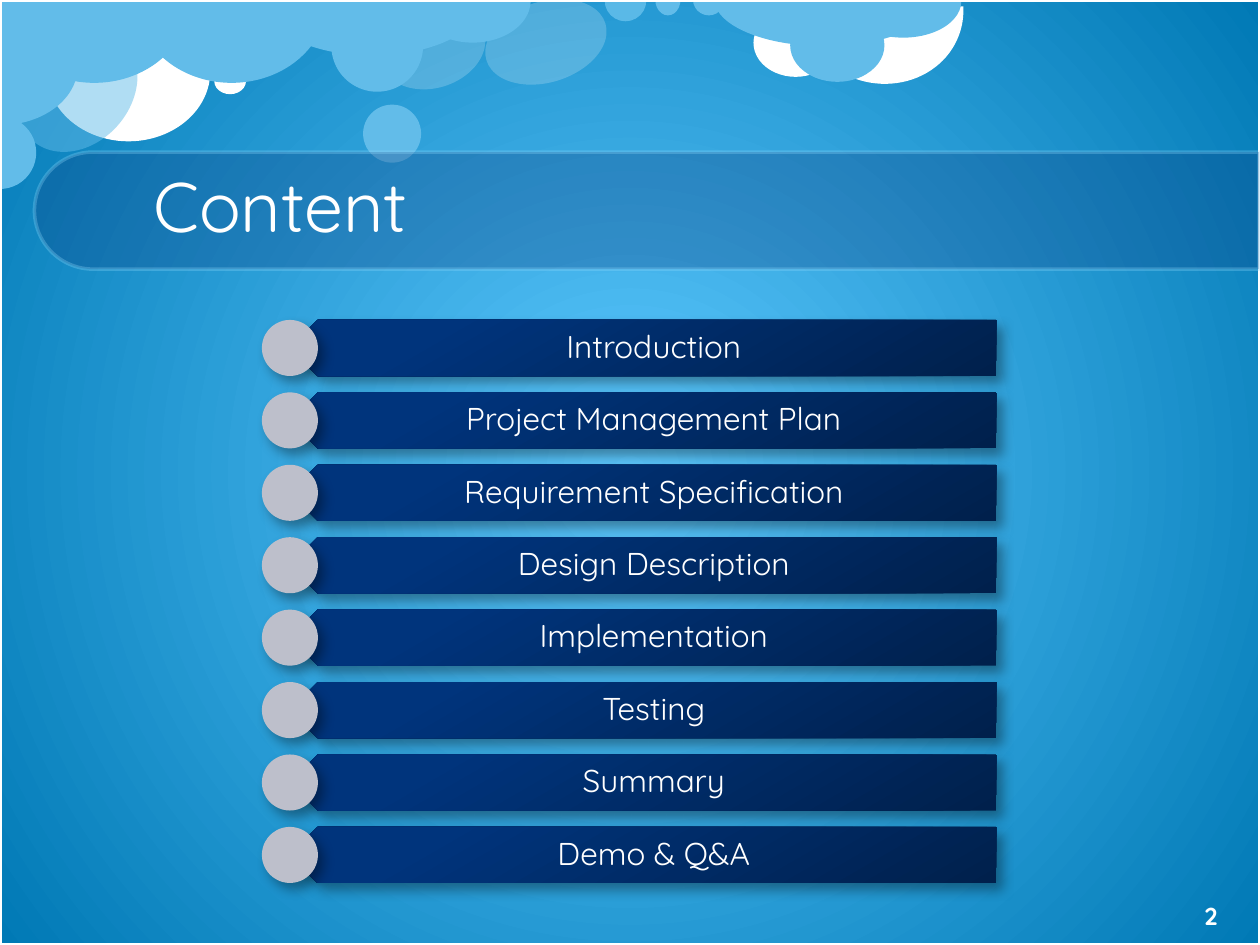
from lxml import etree
from pptx import Presentation
from pptx.dml.color import RGBColor
from pptx.enum.shapes import MSO_SHAPE as Geo
from pptx.enum.text import MSO_ANCHOR as Anchor, PP_ALIGN as Align
from pptx.oxml import parse_xml
from pptx.oxml.ns import nsdecls, qn
from pptx.util import Cm, Pt

FONT = "Quicksand"
WHITE, SKY, PALE, NAVY, SILVER = "FFFFFF", "62BCE9", "8FD9FB", "073779", "BDBFCB"
HALF = (0, 108)
TOPICS = [
    "Introduction", "Project Management Plan", "Requirement Specification",
    "Design Description", "Implementation", "Testing", "Summary", "Demo & Q&A",
]
CLOUDS = [
    (Geo.OVAL, (7.9, -0.13, 1.63, 2.18), WHITE, 20, 72.8),
    (Geo.OVAL, (0.94, 0.03, 3.3, 2.82), WHITE, 100, 0),
    (Geo.ARC, (16.23, -1.52, 3.07, 3.33), WHITE, 100, 106.5),
    (Geo.OVAL, (15.19, 0.18, 1.7, 1.37), WHITE, 100, 0),
    (Geo.PIE, (-0.03, -1.68, 3.86, 3.35), SKY, 100, 0),
    (Geo.PIE, (5.28, -1.12, 4.45, 2.24), SKY, 100, 0),
    (Geo.OVAL, (7.32, 2.11, 1.17, 1.17), SKY, 100, 0),
    (Geo.OVAL, (0.48, 0.46, 2.16, 2.72), SKY, 50, 41.8),
    (Geo.PIE, (-0.74, 2.34, 1.47, 1.47), SKY, 100, 270),
    (Geo.OVAL, (4.32, 1.37, 0.64, 0.53), WHITE, 100, 0),
    (Geo.PIE, (2.74, -1.68, 3.86, 3.35), SKY, 100, 0),
    (Geo.PIE, (14.4, -0.97, 4.45, 1.9), SKY, 100, 0),
    (Geo.OVAL, (15.93, 0.18, 1.9, 1.47), SKY, 100, 0),
    (Geo.PIE, (17.04, -0.71, 2.34, 1.47), SKY, 100, 0),
    (Geo.OVAL, (10.19, -0.41, 1.63, 2.51), WHITE, 20, 72.8),
    (Geo.PIE, (12.19, -0.41, 0.84, 0.84), PALE, 50, 0),
    (Geo.PIE, (13.21, -0.33, 0.51, 0.64), SKY, 100, 0),
    (Geo.PIE, (13.97, -0.33, 0.64, 0.64), SKY, 100, 0),
    (Geo.OVAL, (6.68, 0, 1.85, 1.85), SKY, 100, 0),
    (Geo.PIE, (8.36, -0.84, 2.34, 1.7), SKY, 100, 0),
    (Geo.PIE, (-1.19, -0.23, 2.36, 3.15), SKY, 100, 270),
]


def paint(color_format, color, alpha=100):
    color_format.rgb = RGBColor.from_string(color)
    if alpha < 100:
        srgb = color_format._xFill.find(qn("a:srgbClr"))
        etree.SubElement(srgb, qn("a:alpha")).set("val", str(alpha * 1000))


def set_gradient(fill, parent, stops, direction):
    fill.gradient()
    old = next(parent.iter(qn("a:gradFill")))
    marks = "".join(
        f'<a:gs pos="{pos * 1000}"><a:srgbClr val="{color}"/></a:gs>' for pos, color in stops
    )
    new = parse_xml(
        f'<a:gradFill {nsdecls("a")} rotWithShape="1">'
        f"<a:gsLst>{marks}</a:gsLst>{direction}</a:gradFill>"
    )
    old.getparent().replace(old, new)


def add_shadow(shape):
    effects = shape._element.spPr.find(qn("a:effectLst"))
    effects.append(parse_xml(
        f'<a:outerShdw {nsdecls("a")} blurRad="{Pt(7)}" dist="{Pt(5)}" dir="{50 * 60000}" '
        'algn="tl" rotWithShape="0"><a:srgbClr val="000000"><a:alpha val="35000"/>'
        "</a:srgbClr></a:outerShdw>"
    ))


def add_figure(slide, geometry, box, color=None, alpha=100, rotation=0, adjust=()):
    figure = slide.shapes.add_shape(geometry, *map(Cm, box))
    figure.shadow.inherit = False
    figure.rotation = rotation
    for index, value in enumerate(adjust):
        figure.adjustments[index] = value
    if color:
        figure.fill.solid()
        paint(figure.fill.fore_color, color, alpha)
    else:
        figure.fill.background()
    figure.line.fill.background()
    return figure


def add_outline(figure, color, alpha=100):
    figure.line.width = Pt(2)
    figure.line.fill.solid()
    paint(figure.line.fill.fore_color, color, alpha)


def write(frame, text, size, align, bold=False):
    frame.word_wrap = True
    frame.vertical_anchor = Anchor.MIDDLE
    frame.text = text
    line = frame.paragraphs[0]
    line.alignment = align
    line.font.name, line.font.size, line.font.bold = FONT, Pt(size), bold
    paint(line.font.color, WHITE)
    return line


def add_label(slide, box, text, size, bold=False):
    frame = slide.shapes.add_textbox(*map(Cm, box)).text_frame
    write(frame, text, size, Align.CENTER, bold)
    return frame


def add_sky(slide):
    set_gradient(
        slide.background.fill, slide.element, [(0, "5DC9FF"), (100, "0079B5")],
        '<a:path path="circle"><a:fillToRect l="50000" t="50000" r="50000" b="50000"/></a:path>',
    )
    adjustments = {Geo.PIE: HALF, Geo.ARC: (151.8, 44.48)}
    for geometry, box, color, alpha, rotation in CLOUDS:
        add_figure(slide, geometry, box, color, alpha, rotation, adjustments.get(geometry, ()))
    border = add_figure(slide, Geo.RECTANGLE, (0, 0, 25.4, 19.05))
    add_outline(border, WHITE)


def add_heading(slide, text):
    band = add_figure(slide, Geo.ROUND_2_SAME_RECTANGLE, (11.86, -8.1, 2.36, 24.69),
                      NAVY, 30, 270, (0.5, 0))
    add_outline(band, PALE, 30)
    heading = slide.shapes.title
    heading.left, heading.top, heading.width, heading.height = map(Cm, (2.84, 3, 20.57, 1.98))
    write(heading.text_frame, text, 40, Align.LEFT).line_spacing = Pt(56)
    tree = slide.shapes._spTree
    tree.remove(heading._element)
    tree.append(heading._element)


def add_topic(slide, top, topic):
    bar = add_figure(slide, Geo.PENTAGON, (5.84, top, 14.25, 1.13), rotation=180)
    set_gradient(bar.fill, bar._element, [(0, "00204C"), (80, "00347C"), (100, "00347D")],
                 f'<a:lin ang="{60 * 60000}" scaled="0"/>')
    add_shadow(bar)
    label = add_label(slide, (6.12, top, 13.97, 1.13), topic, 18)
    label.margin_left, label.margin_right = Cm(0.51), Cm(0.36)
    label.margin_top = label.margin_bottom = Cm(0.18)
    label.paragraphs[0].line_spacing = 0.9
    bullet = add_figure(slide, Geo.OVAL, (5.28, top, 1.13, 1.13), SILVER)
    add_shadow(bullet)


def main():
    deck = Presentation()
    deck.slide_width, deck.slide_height = Cm(25.4), Cm(19.05)
    slide = deck.slides.add_slide(deck.slide_layouts[5])
    add_sky(slide)
    add_heading(slide, "Content")
    for row, topic in enumerate(TOPICS):
        add_topic(slide, 6.45 + 1.46 * row, topic)
    add_label(slide, (23.42, 17.91, 1.98, 1.09), "2", 14, bold=True)
    deck.save("out.pptx")


if __name__ == "__main__":
    main()
